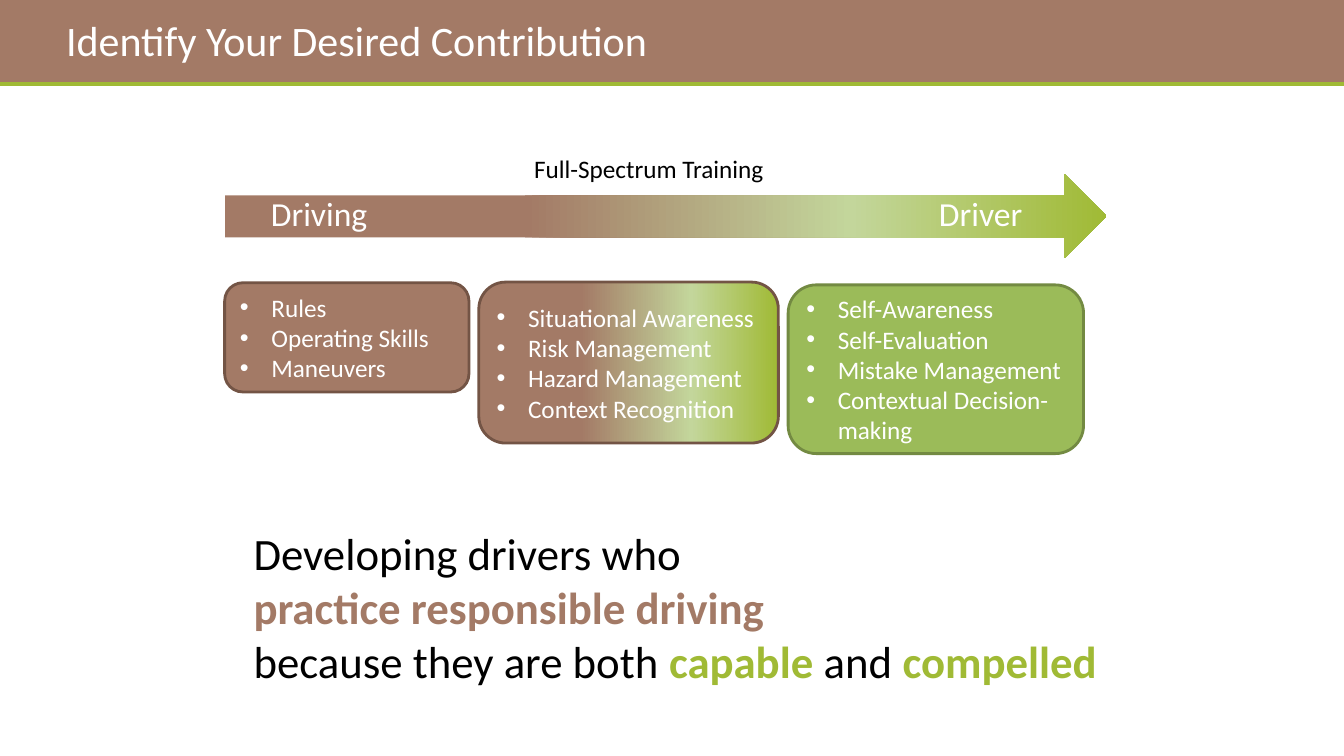
from lxml import etree
from pptx import Presentation
from pptx.dml.color import RGBColor
from pptx.enum import shapes, text
from pptx.oxml.ns import qn
from pptx.util import Pt

COLORS = {"brown": "A37A66", "edge": "735445", "green": "A0BA35", "pale": "C3D69B",
          "leaf": "9BBB59", "moss": "738A42", "white": "FFFFFF", "black": "000000"}
BLEND = [(0, "brown"), (34, "brown"), (71, "pale"), (100, "green")]
KIND = shapes.MSO_SHAPE
LEFT, CENTER = text.PP_ALIGN.LEFT, text.PP_ALIGN.CENTER
MIDDLE, TOP = text.MSO_ANCHOR.MIDDLE, text.MSO_ANCHOR.TOP

LISTS = [
    ((160.5, 202, 174.5, 78), "brown", "edge",
     ["Rules", "Operating Skills", "Maneuvers"]),
    ((342, 201.5, 214, 115), BLEND, "edge",
     ["Situational Awareness", "Risk Management", "Hazard Management",
      "Context Recognition"]),
    ((563, 203.5, 211, 120.5), "leaf", "moss",
     ["Self-Awareness", "Self-Evaluation", "Mistake Management",
      "Contextual Decision-making"]),
]
CLAIM = [
    [("Developing drivers who", "black")],
    [("practice responsible driving", "brown")],
    [("because they are both ", "black"), ("capable ", "green"),
     ("and ", "black"), ("compelled", "green")],
]


def rgb(name):
    return RGBColor.from_string(COLORS[name])


def pts(box):
    return [Pt(v) for v in box]


def style(run, size, color, bold=False):
    font = run.font
    font.name, font.size, font.bold = "Calibri", Pt(size), bold
    font.color.rgb = rgb(color)


def paint(fill, paint_with):
    """Fill with nothing, one colour, or a left-to-right list of stops."""
    if paint_with is None:
        fill.background()
    elif isinstance(paint_with, str):
        fill.solid()
        fill.fore_color.rgb = rgb(paint_with)
    else:
        fill.gradient()
        fill.gradient_angle = 0


def set_stops(shape, stops):
    row = shape.element.spPr.find(".//" + qn("a:gsLst"))
    for old in list(row):
        row.remove(old)
    for place, name in stops:
        stop = etree.SubElement(row, qn("a:gs"), pos=str(place * 1000))
        etree.SubElement(stop, qn("a:srgbClr"), val=COLORS[name])


def add_block(slide, kind, box, fill=None, edge=None):
    shape = slide.shapes.add_shape(kind, *pts(box))
    shape.shadow.inherit = False
    paint(shape.fill, fill)
    if isinstance(fill, list):
        set_stops(shape, fill)
    paint(shape.line.fill, edge)
    if edge:
        shape.line.width = Pt(2)
    return shape


def write(shape, lines, size, color, align=LEFT, anchor=MIDDLE):
    frame = shape.text_frame
    frame.word_wrap = True
    frame.vertical_anchor = anchor
    frame.text = "\n".join(lines)
    for para in frame.paragraphs:
        para.alignment = align
        for run in para.runs:
            style(run, size, color)
    return frame


def add_head(slide, box):
    x, y, w, h = box
    add_block(slide, KIND.RECTANGLE, box, "brown")
    rule = slide.shapes.add_connector(shapes.MSO_CONNECTOR.STRAIGHT,
                                      *pts((x, y + h, x + w, y + h)))
    rule.line.color.rgb = rgb("green")
    rule.line.width = Pt(3)
    etree.SubElement(rule.element.spPr, qn("a:effectLst"))

    title = slide.shapes.title
    title.element.getparent().append(title.element)
    title.left, title.top, title.width, title.height = pts((x + 40, y + 12, 656, 32.5))
    frame = write(title, ["Identify Your Desired Contribution"], 30, "white")
    frame.auto_size = text.MSO_AUTO_SIZE.NONE


def add_list(slide, box, fill, edge, items):
    shape = add_block(slide, KIND.ROUNDED_RECTANGLE, box, fill, edge)
    frame = write(shape, items, 18, "white")
    for para in frame.paragraphs:
        props = para._p.get_or_add_pPr()
        props.set("marL", str(Pt(22.5)))
        props.set("indent", str(Pt(-22.5)))
        etree.SubElement(props, qn("a:buFont"), typeface="Arial")
        etree.SubElement(props, qn("a:buChar"), char="•")


def add_arrow(slide, box):
    x, y, w, h = box
    add_block(slide, KIND.RIGHT_ARROW, box, BLEND)
    for word, left in (("Driver", x + w - 180), ("Driving", x - 22.5)):
        label = add_block(slide, KIND.ROUNDED_RECTANGLE, (left, y - 0.5, 180, 57))
        write(label, [word], 24, "white", CENTER)
    above = slide.shapes.add_textbox(*pts((x + 126, y - 18.5, 354, 29)))
    write(above, ["Full-Spectrum Training"], 18, "black", CENTER, TOP)


def add_claim(slide, box):
    frame = slide.shapes.add_textbox(*pts(box)).text_frame
    frame.word_wrap = True
    for i, parts in enumerate(CLAIM):
        para = frame.add_paragraph() if i else frame.paragraphs[0]
        for words, color in parts:
            run = para.add_run()
            run.text = words
            style(run, 32, color, color != "black")


def main():
    deck = Presentation()
    deck.slide_width, deck.slide_height = Pt(960), Pt(540)
    slide = deck.slides.add_slide(deck.slide_layouts[5])
    add_head(slide, (0, 0, 960, 60))
    for entry in LISTS:
        add_list(slide, *entry)
    add_claim(slide, (174, 372, 630, 124))
    add_arrow(slide, (160.5, 124.5, 630, 60))
    deck.save("out.pptx")


if __name__ == "__main__":
    main()
